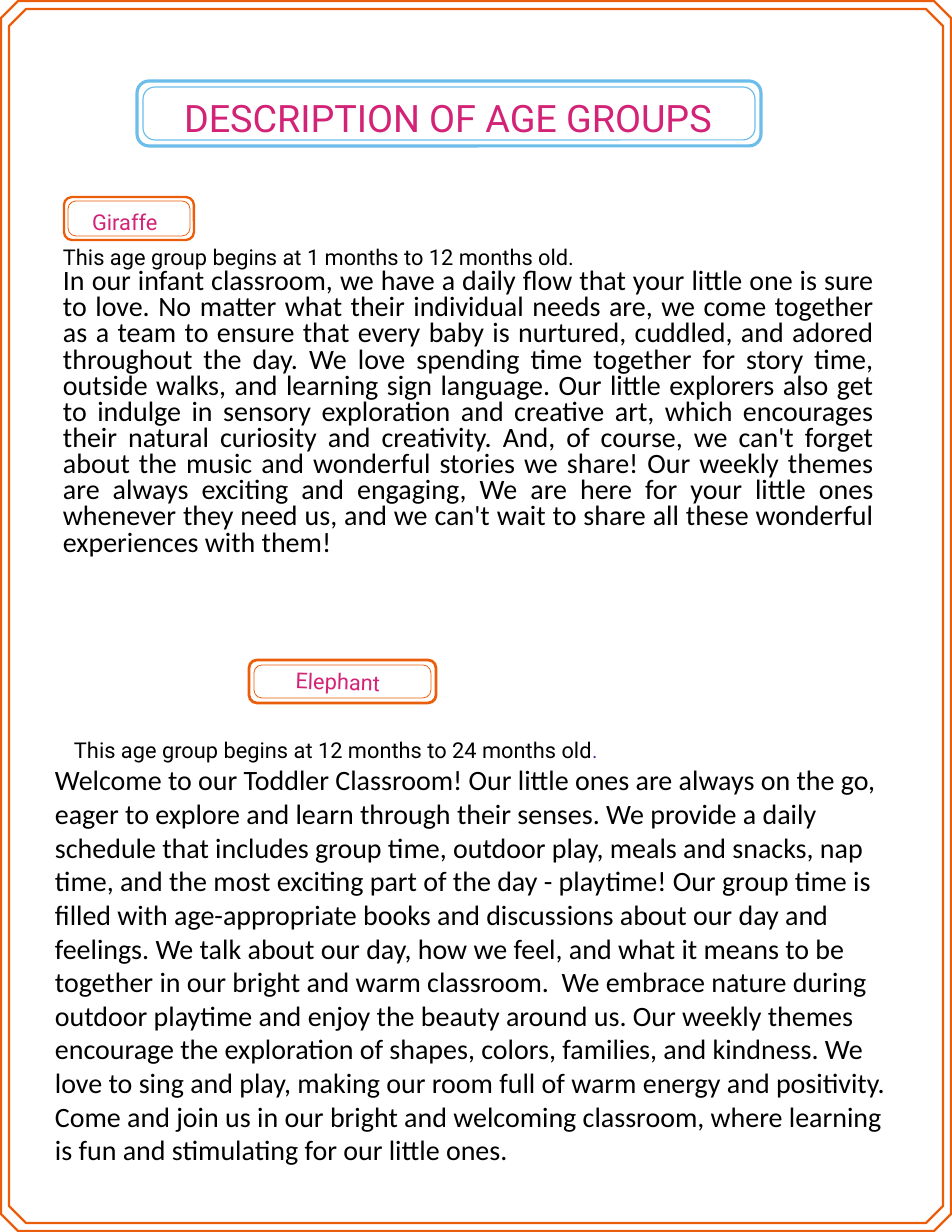
"""Build a one-page description of two age groups."""
from pptx import Presentation
from pptx.dml.color import RGBColor
from pptx.enum.shapes import MSO_SHAPE
from pptx.enum.text import PP_ALIGN
from pptx.util import Emu, Pt

PX = 914400 // 112
PAGE_WIDTH, PAGE_HEIGHT = 952, 1232
OCTAGON, ROUNDED = MSO_SHAPE.OCTAGON, MSO_SHAPE.ROUNDED_RECTANGLE
LEFT, CENTER, JUSTIFY = PP_ALIGN.LEFT, PP_ALIGN.CENTER, PP_ALIGN.JUSTIFY
ORANGE = RGBColor(0xEA, 0x5D, 0x0B)
BLUE = RGBColor(0x6D, 0xBD, 0xEB)
PINK = RGBColor(0xD2, 0x23, 0x76)
PURPLE = RGBColor(0x54, 0x28, 0x85)
BLACK = RGBColor(0, 0, 0)

GIRAFFE_SENTENCES = [
    "In our infant classroom, we have a daily flow that your little one is sure to love.",
    "No matter what their individual needs are, we come together as a team to ensure that "
    "every baby is nurtured, cuddled, and adored throughout the day.",
    "We love spending time together for story time, outside walks, and learning sign language.",
    "Our little explorers also get to indulge in sensory exploration and creative art, which "
    "encourages their natural curiosity and creativity.",
    "And, of course, we can't forget about the music and wonderful stories we share!",
    "Our weekly themes are always exciting and engaging, We are here for your little ones "
    "whenever they need us, and we can't wait to share all these wonderful experiences "
    "with them!",
]
ELEPHANT_SENTENCES = [
    "Welcome to our Toddler Classroom!",
    "Our little ones are always on the go, eager to explore and learn through their senses.",
    "We provide a daily schedule that includes group time, outdoor play, meals and snacks, "
    "nap time, and the most exciting part of the day - playtime!",
    "Our group time is filled with age-appropriate books and discussions about our day "
    "and feelings.",
    "We talk about our day, how we feel, and what it means to be together in our bright "
    "and warm classroom.  We embrace nature during outdoor playtime and enjoy the beauty "
    "around us.",
    "Our weekly themes encourage the exploration of shapes, colors, families, and kindness.",
    "We love to sing and play, making our room full of warm energy and positivity.",
    "Come and join us in our bright and welcoming classroom, where learning is fun and "
    "stimulating for our little ones.",
]

FRAMES = [
    (OCTAGON, (1, 1, 951, 1231), 17, 8, (1.5, 1.5), ORANGE),
    (ROUNDED, (137, 81, 761, 146), 12, 6, (2, 0.75), BLUE),
    (ROUNDED, (64, 197, 194, 240), 8, 4, (1.5, 0.5), ORANGE),
    (ROUNDED, (249, 660, 436, 703), 8, 5, (1.75, 0.5), ORANGE),
]
TITLE = ("Roboto", 24.3, PINK)
LABEL = ("Roboto", 14, PINK)
AGES = ("Roboto", 14, BLACK)
BODY = ("Calibri", 18, BLACK)
STOP = ("Calibri", 12, PURPLE)

TEXTS = [
    ((162, 87, 572, 105), 0, CENTER, 34, [[("DESCRIPTION OF AGE GROUPS", TITLE)]]),
    ((78, 204, 99, 30), 0, CENTER, 19.6, [[("Giraffe ", LABEL)]]),
    ((273, 664, 130, 30), 1.9, CENTER, 19.6, [[("Elephant", LABEL)]]),
    ((63, 244, 811, 339), 0, JUSTIFY, 16.8, [
        [("This age group begins at 1 months to 12 months old.", AGES)],
        [(" ".join(GIRAFFE_SENTENCES), BODY)],
    ]),
    ((55, 763, 838, 403), 0, LEFT, None, [[(" ".join(ELEPHANT_SENTENCES), BODY)]]),
    ((1, 737, 669, 26), 0, CENTER, 16.8, [
        [("This age group begins at 12 months to 24 months old", AGES), (".", STOP)],
    ]),
]


def add_outline(slide, preset, box, corner, width, color):
    left, top, right, bottom = box
    shape = slide.shapes.add_shape(
        preset, *(Emu(v * PX) for v in (left, top, right - left, bottom - top)))
    shape.adjustments[0] = corner / min(right - left, bottom - top)
    shape.shadow.inherit = False
    shape.fill.background()
    shape.line.color.rgb = color
    shape.line.width = Pt(width)


def add_text(slide, box, rotation, alignment, spacing, paragraphs):
    shape = slide.shapes.add_textbox(*(Emu(v * PX) for v in box))
    shape.rotation = rotation
    frame = shape.text_frame
    frame.word_wrap = True
    frame.margin_left = frame.margin_top = frame.margin_right = frame.margin_bottom = 0
    for index, runs in enumerate(paragraphs):
        paragraph = frame.add_paragraph() if index else frame.paragraphs[0]
        paragraph.alignment = alignment
        if spacing:
            paragraph.line_spacing = Pt(spacing)
        for text, (font_name, size, color) in runs:
            run = paragraph.add_run()
            run.text = text
            run.font.name = font_name
            run.font.size = Pt(size)
            run.font.color.rgb = color


def main():
    presentation = Presentation()
    presentation.slide_width = Emu(PAGE_WIDTH * PX)
    presentation.slide_height = Emu(PAGE_HEIGHT * PX)
    slide = presentation.slides.add_slide(presentation.slide_layouts[6])
    for preset, box, corner, gap, widths, color in FRAMES:
        left, top, right, bottom = box
        inner = (left + gap, top + gap, right - gap, bottom - gap)
        for outline, width in zip((box, inner), widths):
            add_outline(slide, preset, outline, corner, width, color)
    for text in TEXTS:
        add_text(slide, *text)
    presentation.save("out.pptx")


if __name__ == "__main__":
    main()
